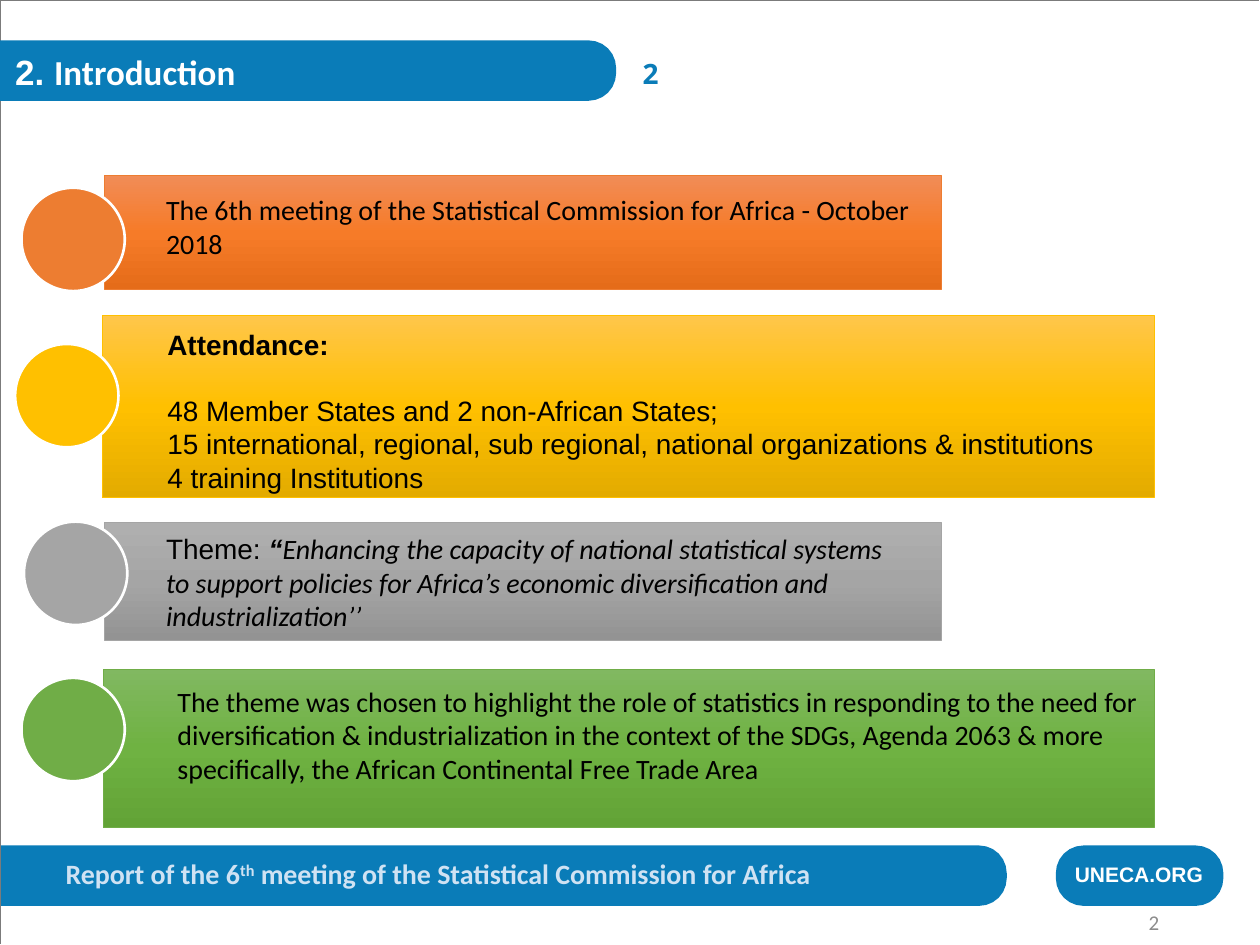
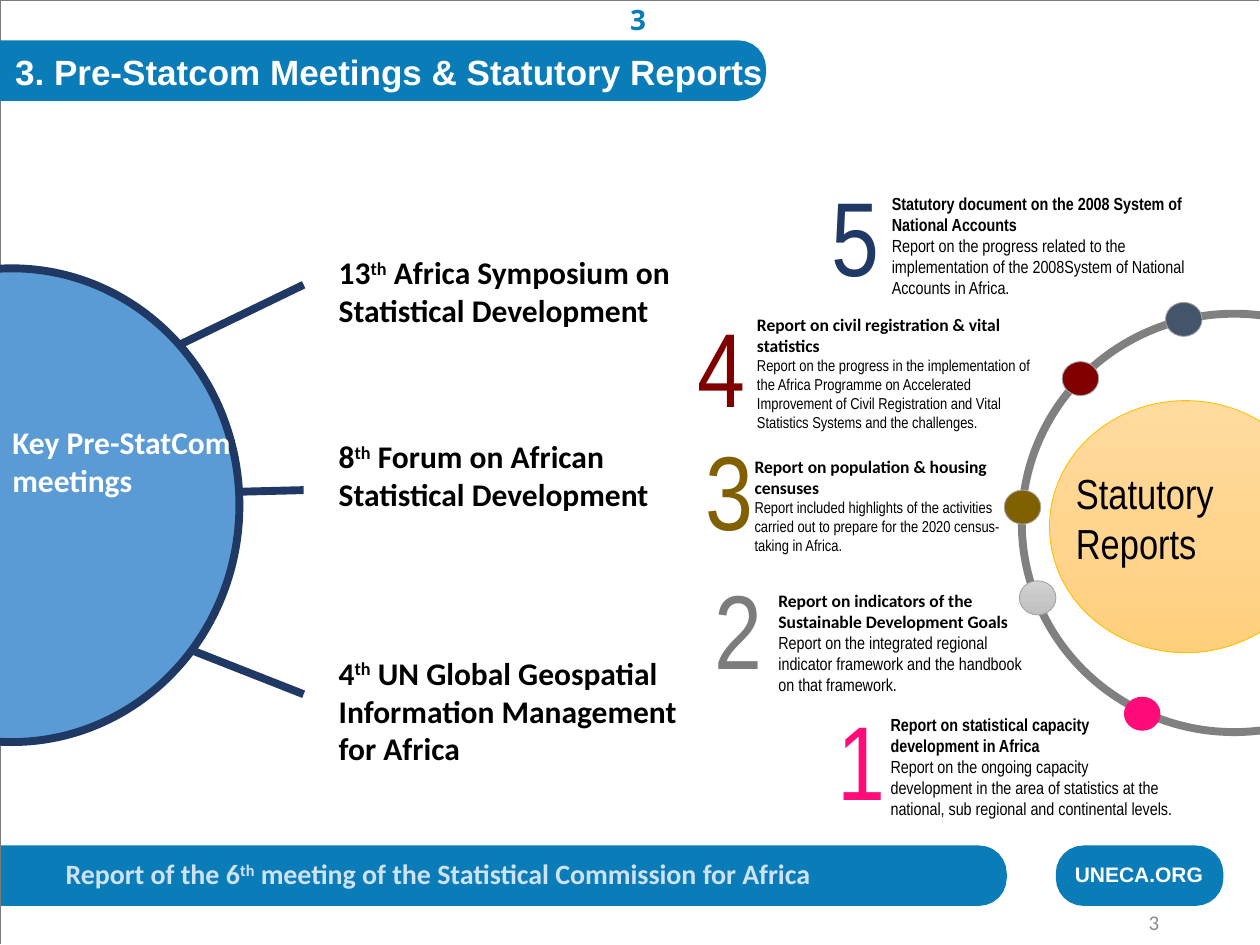
import math
from copy import deepcopy
from dataclasses import dataclass
from typing import NamedTuple, Optional

from pptx import Presentation
from pptx import util as u
from pptx.dml.color import RGBColor
from pptx.enum import shapes, text
from pptx.oxml.ns import qn

SLIDE_WIDTH, SLIDE_HEIGHT = u.Inches(10), u.Inches(7.5)
COLUMN, ROW = SLIDE_WIDTH / 100, SLIDE_HEIGHT / 75
TITLE_ONLY = 5

COLORS = {
    "brand": "0A7CB8", "pale": "CFE2F3", "white": "FFFFFF", "black": "000000",
    "frame": "7B7B7B", "page": "8C8C8C", "navy": "203864", "sky": "5B9BD5",
    "orange": "ED7D31", "gold": "FFC000", "gray": "A5A5A5", "green": "70AD47",
    "maroon": "800000", "olive": "806000", "steel": "7C7C7C", "pink": "FF0B7A",
    "slate": "44546A", "ring": "808080",
}
GRADIENTS = {
    "orange": ("F18C57", "F67B28", "E56C19"),
    "gold": ("FFC64B", "FFC000", "E3AB00"),
    "gray": ("AFAFAF", "A5A5A5", "939393"),
    "green": ("81B861", "6FB242", "62A336"),
    "silver": ("D2D2D2", "C8C8C8", "C0C0C0"),
    "cream": ("FFDB9E", "FFD590", "FFD07C"),
}


class Box(NamedTuple):
    """A place on the grid, in columns and rows."""
    left: float
    top: float
    width: float
    height: float

    def lengths(self) -> tuple:
        return (round(self.left * COLUMN), round(self.top * ROW),
                round(self.width * COLUMN), round(self.height * ROW))


@dataclass
class Run:
    """A stretch of text; whatever is None follows the whole text's format."""
    text: str
    size: Optional[float] = None
    font: Optional[str] = None
    bold: Optional[bool] = None
    italic: Optional[bool] = None
    raised: bool = False


@dataclass
class Point:
    """One bar of the introduction, with its circle."""
    color: str
    bar: Box
    text_box: Box
    circle: tuple
    paragraphs: list
    font: str = "Calibri"
    gap: float = 0


@dataclass
class Report:
    number: str
    color: str
    number_at: tuple
    text_box: Box
    heading: str
    detail: str
    dot_at: tuple
    dot_color: str
    heading_font: str = "Calibri"
    detail_size: float = 10
    dot_line: Optional[str] = "gray"
    dot_gradient: bool = False


def rgb(name: str) -> RGBColor:
    return RGBColor.from_string(COLORS[name])


def ordinal(number: str, rest: str) -> list:
    return [Run(number), Run("th", raised=True), Run(rest)]


def write(frame, paragraphs: list, *, size: float = 16, font: str = "Calibri",
          color: str = "black", bold: bool = False, margins: bool = True,
          align=text.PP_ALIGN.LEFT, anchor=text.MSO_ANCHOR.TOP,
          gap: float = 0) -> None:
    """Fill a text frame; gap is the space in points before the second paragraph."""
    frame.word_wrap = True
    frame.auto_size = text.MSO_AUTO_SIZE.NONE
    frame.vertical_anchor = anchor
    if not margins:
        frame.margin_left = frame.margin_right = 0
        frame.margin_top = frame.margin_bottom = 0
    for index, runs in enumerate(paragraphs):
        paragraph = frame.add_paragraph() if index else frame.paragraphs[0]
        paragraph.alignment = align
        if index == 1 and gap:
            paragraph.space_before = u.Pt(gap)
        for part in [Run(runs)] if isinstance(runs, str) else runs:
            run = paragraph.add_run()
            run.text = part.text
            run.font.size = u.Pt(part.size or size)
            run.font.name = part.font or font
            run.font.bold = bold if part.bold is None else part.bold
            run.font.italic = part.italic
            run.font.color.rgb = rgb(color)
            if part.raised:
                run.font._element.set("baseline", "30000")


def add_text(slide, box: Box, paragraphs: list, **style) -> None:
    write(slide.shapes.add_textbox(*box.lengths()).text_frame, paragraphs, **style)


def paint(shape, fill: Optional[str], line: Optional[str], width: float,
          gradient: bool = False) -> None:
    shape.shadow.inherit = False
    if gradient:
        shape.fill.gradient()
        shape.fill.gradient_angle = 270
        last = shape.fill.gradient_stops[1]._gs
        last.addprevious(deepcopy(last))
        for index, stop in enumerate(shape.fill.gradient_stops):
            stop.color.rgb = RGBColor.from_string(GRADIENTS[fill][index])
            stop.position = index / 2
    elif fill:
        shape.fill.solid()
        shape.fill.fore_color.rgb = rgb(fill)
    else:
        shape.fill.background()
    if line:
        shape.line.color.rgb = rgb(line)
        shape.line.width = u.Pt(width)
    else:
        shape.line.fill.background()


def add_shape(slide, kind, box: Box, fill: Optional[str], line: Optional[str] = None,
              width: float = 0.5, gradient: bool = False) -> None:
    paint(slide.shapes.add_shape(kind, *box.lengths()), fill, line, width, gradient)


def add_ellipse(slide, box: Box, *colors, **style) -> None:
    add_shape(slide, shapes.MSO_SHAPE.OVAL, box, *colors, **style)


def add_outline(slide, points: list, fill: Optional[str], line: Optional[str],
                close: bool):
    corners = [(round(x * COLUMN), round(y * ROW)) for x, y in points]
    builder = slide.shapes.build_freeform(*corners[0])
    builder.add_line_segments(corners[1:], close=close)
    shape = builder.convert_to_shape()
    paint(shape, fill, line, 0.25)
    return shape


def add_band(slide, box: Box, round_left: bool = False):
    """Draw a brand-coloured band with round right corners, and left ones if asked."""
    radius = 2.2
    left, top, width, height = box
    right, bottom = left + width, top + height
    corners = [(right - radius, top + radius, -90),
               (right - radius, bottom - radius, 0)]
    points = []
    if round_left:
        corners += [(left + radius, bottom - radius, 90),
                    (left + radius, top + radius, 180)]
    else:
        points = [(left, bottom), (left, top)]
    for x, y, start in corners:
        for step in range(7):
            angle = math.radians(start + 15 * step)
            points.append((x + radius * math.cos(angle), y + radius * math.sin(angle)))
    return add_outline(slide, points, "brand", None, True)


def add_line(slide, start: tuple, end: tuple) -> None:
    (x1, y1), (x2, y2) = start, end
    line = slide.shapes.add_connector(
        shapes.MSO_CONNECTOR.STRAIGHT, round(x1 * COLUMN), round(y1 * ROW),
        round(x2 * COLUMN), round(y2 * ROW))
    line.line.color.rgb = rgb("navy")
    line.line.width = u.Pt(4.5)
    properties = line._element.spPr
    properties.append(properties.makeelement(qn("a:effectLst"), {}))


def add_framed_slide(presentation, number: str, title: list, title_width: float,
                     band_width: float, number_at: tuple):
    slide = presentation.slides.add_slide(presentation.slide_layouts[TITLE_ONLY])
    add_band(slide, Box(0, 67.1, 79.9, 4.8))
    add_text(slide, Box(5.2, 68, 75.9, 2.7),
             [ordinal("Report of the 6", " meeting of the Statistical Commission for Africa")],
             color="pale", bold=True, margins=False)
    add_outline(slide, [(0, 74.9), (0, 0), (99.9, 0)], None, "frame", False)
    title_band = add_band(slide, Box(0, 3.2, band_width, 4.8))
    add_band(slide, Box(83.8, 67.1, 13.3, 4.8), round_left=True)
    add_text(slide, Box(85.3, 68.4, 11.8, 2), ["UNECA.ORG"], size=12, font="Arial",
             color="white", bold=True, margins=False)
    heading = slide.shapes.title
    title_band._element.addnext(heading._element)
    heading.left, heading.top, heading.width, heading.height = Box(
        1.2, 4, title_width, 3.4).lengths()
    write(heading.text_frame, [title], size=20, font="Arial", color="white",
          bold=True, margins=False)
    add_text(slide, Box(*number_at, 6.1, 2.7), [number], font="Noto Sans",
             color="brand", bold=True, margins=False)
    add_text(slide, Box(89.3, 72.4, 3.7, 1.5), [number], size=12, color="page",
             align=text.PP_ALIGN.RIGHT, anchor=text.MSO_ANCHOR.MIDDLE)
    return slide


POINTS = [
    Point("orange", Box(8.3, 13.9, 66.4, 9.1), Box(12.2, 14.8, 62.6, 6.4), (1.7, 14.9),
          ["The 6th meeting of the Statistical Commission for Africa - October 2018"]),
    Point("gold", Box(8.1, 25, 83.5, 14.5), Box(12.3, 25.5, 76.5, 14.5), (1.2, 27.3),
          [[Run("Attendance:", bold=True)],
           "48 Member States and 2 non-African States;",
           "15 international, regional, sub regional, national organizations & institutions",
           "4 training Institutions"], font="Arial", gap=18.4),
    Point("gray", Box(8.3, 41.5, 66.4, 9.3), Box(12.2, 41.7, 60.3, 9.1), (1.9, 41.4),
          [[Run("Theme: ", font="Arial"),
            Run("“", font="Arial", bold=True, italic=True),
            Run("Enhancing the capacity of national statistical systems to support policies "
                "for Africa’s economic diversification and industrialization’’",
                italic=True)]]),
    Point("green", Box(8.2, 53.1, 83.4, 12.6), Box(13.1, 53.8, 78.5, 6.9), (1.7, 53.8),
          ["The theme was chosen to highlight the role of statistics in responding to the "
           "need for diversification & industrialization in the context of the SDGs, "
           "Agenda 2063 & more specifically, the African Continental Free Trade Area"]),
]

# Line start, line end, text top, text height, number, wording
MEETINGS = [
    ((11.7, 28.6), (24.1, 22.6), 19.6, 7.1, "13",
     " Africa Symposium on Statistical Development"),
    ((12.3, 39.2), (24.1, 38.9), 34.2, 7.1, "8",
     " Forum on African Statistical Development"),
    ((12.9, 50.7), (24.1, 55.1), 51.4, 10.1, "4",
     " UN Global Geospatial Information Management for Africa"),
]

REPORTS = [
    Report("5", "navy", (65, 13.1), Box(69.8, 14.8, 26.7, 9.4),
           "Statutory document on the 2008 System of National Accounts",
           "Report on the progress related to the implementation of the 2008System of "
           "National Accounts in Africa.",
           (92.5, 24), "slate", heading_font="Arial Narrow"),
    Report("4", "maroon", (54.4, 23.5), Box(59.1, 24.4, 24.7, 10.8),
           "Report on civil registration & vital statistics",
           "Report on the progress in the implementation of the Africa Programme on "
           "Accelerated Improvement of Civil Registration and Vital Statistics Systems "
           "and the challenges.",
           (84.3, 28.7), "maroon", detail_size=9),
    Report("3", "olive", (55, 33.3), Box(58.9, 35.7, 23, 8.9),
           "Report on population & housing censuses",
           "Report included highlights of the activities carried out to prepare for the "
           "2020 census-taking in Africa.",
           (79.7, 38.9), "olive", detail_size=9),
    Report("2", "steel", (55.7, 44.3), Box(60.8, 46.3, 21.3, 9.4),
           "Report on indicators of the Sustainable Development Goals",
           "Report on the integrated regional indicator framework and the handbook on "
           "that framework.",
           (80.9, 46.1), "silver", dot_gradient=True),
    Report("1", "pink", (65.5, 54.7), Box(69.7, 56.2, 24.4, 9.4),
           "Report on statistical capacity development in Africa",
           "Report on the ongoing capacity development in the area of statistics at the "
           "national, sub regional and continental levels.",
           (89.2, 55.3), "pink", heading_font="Arial Narrow", dot_line=None),
]


def build_introduction(presentation) -> None:
    slide = add_framed_slide(presentation, "2", [Run("2. "), Run("Introduction", font="Calibri")],
                             27.9, 48.9, (51, 4.5))
    for point in POINTS:
        add_shape(slide, shapes.MSO_SHAPE.RECTANGLE, point.bar, point.color, point.color,
                  gradient=True)
        add_text(slide, point.text_box, point.paragraphs, font=point.font, gap=point.gap)
        add_ellipse(slide, Box(*point.circle, 8.2, 8.2), point.color, "white", 1.5)


def build_meetings(presentation) -> None:
    slide = add_framed_slide(presentation, "3",
                             [Run("3. Pre-Statcom Meetings & Statutory Reports")],
                             68.9, 60.8, (50, 0.2))
    for start, end, top, height, number, wording in MEETINGS:
        add_line(slide, start, end)
        add_text(slide, Box(25.9, top, 29, height), [ordinal(number, wording)],
                 size=18, bold=True)
    add_ellipse(slide, Box(-17.1, 21.3, 36.1, 37.6), "sky", "navy", 4.5)
    add_text(slide, Box(0, 33.1, 21.3, 7.1), ["Key Pre-StatCom", "meetings"],
             size=18, color="white", bold=True)

    add_ellipse(slide, Box(81.1, 24.9, 33.7, 33.2), None, "ring", 4.5)
    for report in REPORTS:
        add_text(slide, Box(*report.number_at, 4.5, 11.1), [report.number], size=60,
                 font="Arial Narrow", color=report.color)
        add_text(slide, report.text_box,
                 [[Run(report.heading, font=report.heading_font, bold=True)],
                  [Run(report.detail, size=report.detail_size)]],
                 size=10, font="Arial Narrow")
        add_ellipse(slide, Box(*report.dot_at, 2.9, 2.7), report.dot_color,
                    report.dot_line, gradient=report.dot_gradient)
    add_ellipse(slide, Box(83.3, 31.8, 21.6, 20), "cream", "gold", gradient=True)
    add_text(slide, Box(84.4, 36.6, 15.9, 9.1), ["Statutory", "Reports"], size=24,
             font="Arial Narrow")


def main() -> None:
    presentation = Presentation()
    presentation.slide_width, presentation.slide_height = SLIDE_WIDTH, SLIDE_HEIGHT
    build_introduction(presentation)
    build_meetings(presentation)
    presentation.save("out.pptx")


if __name__ == "__main__":
    main()
